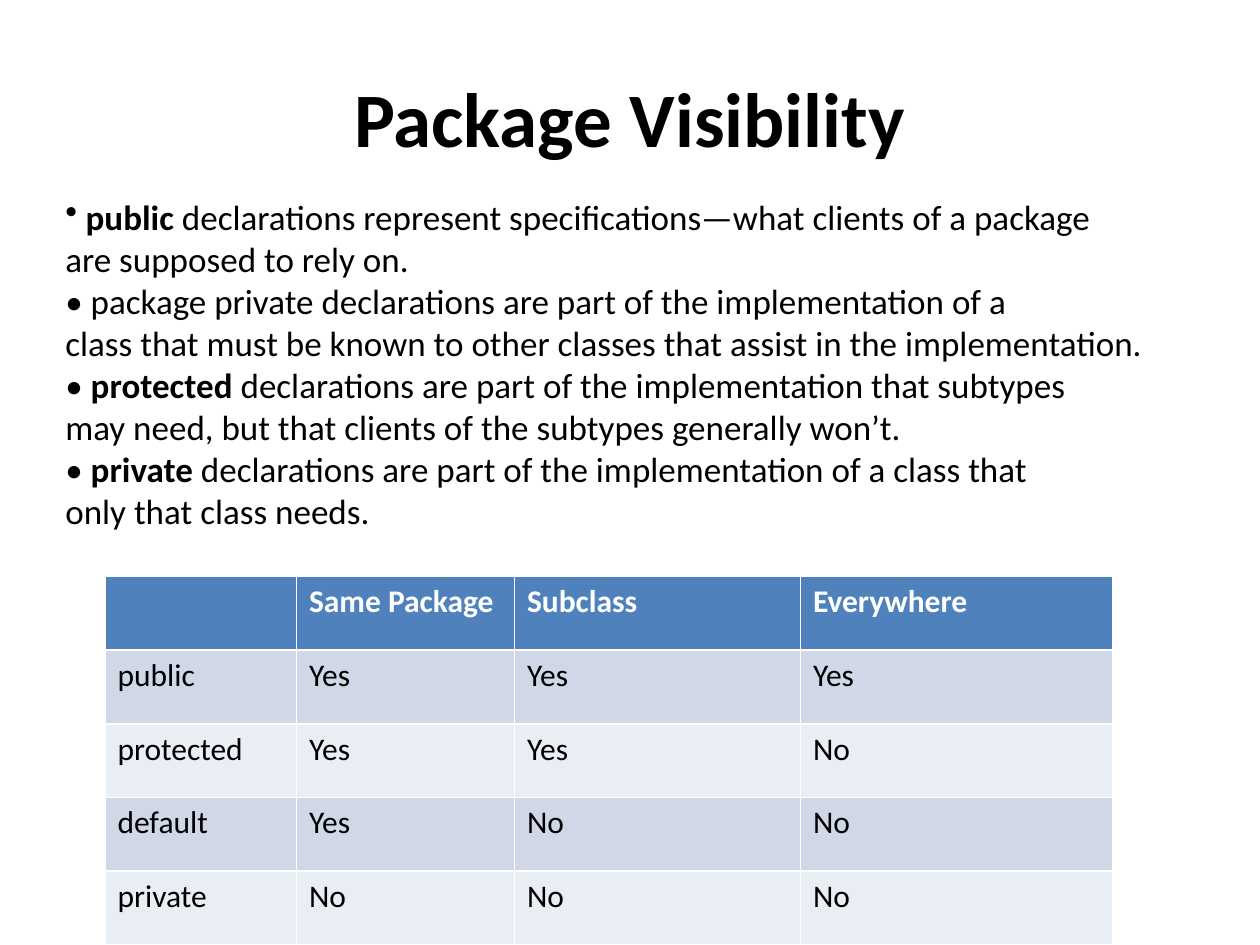
import pptx
import pptx.util
import pptx.dml.color
import pptx.enum.text
import lxml.etree
from dataclasses import dataclass

WIDE, HIGH = 10, 7.5


@dataclass(frozen=True)
class Theme:
    font: str = "Calibri"
    ink: str = "000000"
    paper: str = "FFFFFF"
    head: str = "4F81BD"
    bands: tuple = ("D0D8E8", "E9EDF4")
    title: int = 44
    body: int = 20
    cell: int = 18


class Deck:
    """Holds the theme and the current slide; boxes are shares of the slide."""

    def __init__(self, theme):
        self.theme = theme
        self.file = pptx.Presentation()
        self.file.slide_width = pptx.util.Inches(WIDE)
        self.file.slide_height = pptx.util.Inches(HIGH)
        self.slide = self.file.slides.add_slide(self.file.slide_layouts[6])

    def place(self, box):
        sides = (self.file.slide_width, self.file.slide_height) * 2
        return [round(share * side) for share, side in zip(box, sides)]

    def style(self, para, size, color, bold=None):
        font = para.font
        font.name, font.size, font.bold = self.theme.font, pptx.util.Pt(size), bold
        font.color.rgb = pptx.dml.color.RGBColor.from_string(color)

    def frame(self, box):
        frame = self.slide.shapes.add_textbox(*self.place(box)).text_frame
        frame.word_wrap = True
        return frame

    def title(self, text, box):
        frame = self.frame(box)
        frame.vertical_anchor = pptx.enum.text.MSO_ANCHOR.MIDDLE
        para = frame.paragraphs[0]
        para.text = text
        para.alignment = pptx.enum.text.PP_ALIGN.CENTER
        self.style(para, self.theme.title, self.theme.ink, True)

    def body(self, lines, box):
        """Write one paragraph a line; text between asterisks is bold."""
        frame = self.frame(box)
        frame.auto_size = pptx.enum.text.MSO_AUTO_SIZE.SHAPE_TO_FIT_TEXT
        for row, line in enumerate(lines):
            para = frame.add_paragraph() if row else frame.paragraphs[0]
            self.style(para, self.theme.body, self.theme.ink)
            for part, text in enumerate(line.split("*")):
                if text:
                    run = para.add_run()
                    run.text = text
                    run.font.bold = part % 2 == 1
        self.bullet(frame.paragraphs[0])

    def bullet(self, para):
        props = para._p.get_or_add_pPr()
        name = pptx.oxml.ns.qn("a:buChar")
        mark = lxml.etree.Element(name, char="•")
        props.insert(0, mark)

    def table(self, rows, cols, box):
        grid = self.slide.shapes.add_table(
            len(rows), len(cols), *self.place(box)).table
        for col, share in zip(grid.columns, cols):
            col.width = round(share * self.file.slide_width)
        for r, row in enumerate(rows):
            fill = self.theme.bands[(r - 1) % 2] if r else self.theme.head
            ink = self.theme.ink if r else self.theme.paper
            for c, text in enumerate(row):
                cell = grid.cell(r, c)
                cell.fill.solid()
                cell.fill.fore_color.rgb = pptx.dml.color.RGBColor.from_string(fill)
                cell.text = text
                self.style(cell.text_frame.paragraphs[0],
                           self.theme.cell, ink, r == 0)


LINES = [
    " *public* declarations represent specifications—what clients of a package",
    "are supposed to rely on.",
    "• package private declarations are part of the implementation of a",
    "class that must be known to other classes that assist in the implementation.",
    "• *protected* declarations are part of the implementation that subtypes",
    "may need, but that clients of the subtypes generally won’t.",
    "• *private* declarations are part of the implementation of a class that",
    "only that class needs.",
]
ACCESS = [
    ("", "Same Package", "Subclass", "Everywhere"),
    ("public", "Yes", "Yes", "Yes"),
    ("protected", "Yes", "Yes", "No"),
    ("default", "Yes", "No", "No"),
    ("private", "No", "No", "No"),
]


def main():
    deck = Deck(Theme())
    deck.title("Package Visibility", (0.05, 0.04, 0.9, 1 / 6))
    deck.table(ACCESS, (0.152, 0.173, 0.227, 0.248),
               (1 / 12, 0.61, 0.8, 0.39))
    deck.body(LINES, (0.042, 0.2, 0.925, 0.42))
    deck.file.save("out.pptx")


if __name__ == "__main__":
    main()
